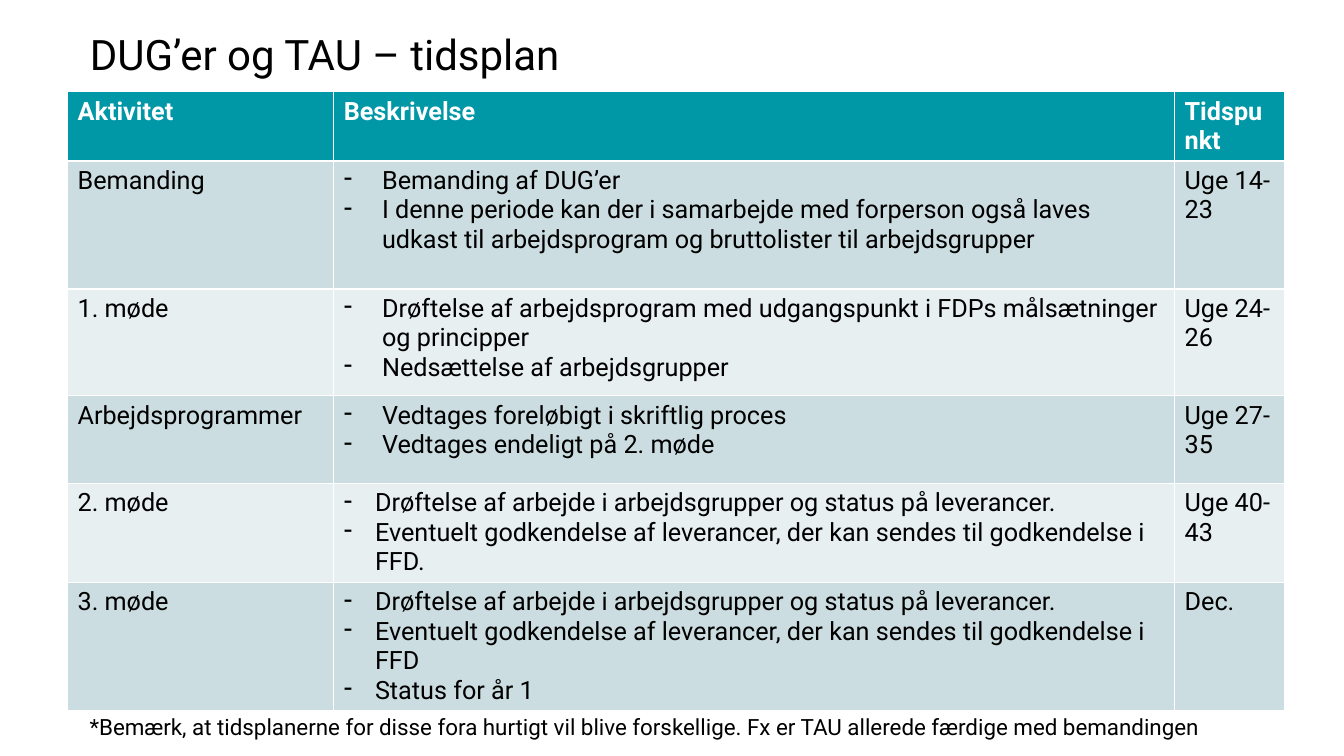
"""Build the timetable slide for DUG and TAU."""
from lxml import etree
from pptx import Presentation, util as u
from pptx.dml.color import RGBColor
from pptx.enum import text
from pptx.oxml import ns

TEAL = RGBColor(0x00, 0x97, 0xA7)
BAND_DARK = RGBColor(0xCC, 0xDD, 0xE1)
BAND_LIGHT = RGBColor(0xE7, 0xEF, 0xF1)
WHITE = RGBColor(0xFF, 0xFF, 0xFF)
BLACK = RGBColor(0x00, 0x00, 0x00)

COLUMN_WIDTHS = [2.64, 8.34, 1.09]
ROW_HEIGHTS = [0.68, 1.27, 1.06, 0.87, 0.96, 1.25]
HEADINGS = ["Aktivitet", "Beskrivelse", "Tidspunkt"]
STATUS = "Drøftelse af arbejde i arbejdsgrupper og status på leverancer."
APPROVAL = "Eventuelt godkendelse af leverancer, der kan sendes til godkendelse i FFD"
ACTIVITIES = [
    ("Bemanding", 0.38, [
        "Bemanding af DUG’er",
        "I denne periode kan der i samarbejde med forperson også laves "
        "udkast til arbejdsprogram og bruttolister til arbejdsgrupper"], "Uge 14-23"),
    ("1. møde", 0.38, [
        "Drøftelse af arbejdsprogram med udgangspunkt i FDPs målsætninger og principper",
        "Nedsættelse af arbejdsgrupper"], "Uge 24-26"),
    ("Arbejdsprogrammer", 0.38, [
        "Vedtages foreløbigt i skriftlig proces",
        "Vedtages endeligt på 2. møde"], "Uge 27-35"),
    ("2. møde", 0.31, [STATUS, APPROVAL + "."], "Uge 40-43"),
    ("3. møde", 0.31, [STATUS, APPROVAL, "Status for år 1"], "Dec."),
]


def set_font(para, size, colour=BLACK, bold=False):
    font = para.font
    font.name, font.size, font.bold = "Roboto", u.Pt(size), bold
    font.color.rgb = colour


def add_dash(para, indent):
    properties = para._p.get_or_add_pPr()
    properties.set("marL", str(u.Inches(indent)))
    properties.set("indent", str(-u.Inches(indent)))
    etree.SubElement(properties, ns.qn("a:buChar")).set("char", "-")


deck = Presentation()
deck.slide_width, deck.slide_height = u.Inches(13.33), u.Inches(7.5)
page = deck.slides.add_slide(deck.slide_layouts[5])

title = page.shapes.title
title.left, title.top = u.Inches(0.79), u.Inches(0.23)
title.width, title.height = u.Inches(12.17), u.Inches(0.61)
title.text_frame.text = "DUG’er og TAU – tidsplan"
title.text_frame.vertical_anchor = text.MSO_ANCHOR.MIDDLE
title.text_frame.paragraphs[0].alignment = text.PP_ALIGN.LEFT
set_font(title.text_frame.paragraphs[0], 30)

timetable = page.shapes.add_table(
    len(ROW_HEIGHTS), len(COLUMN_WIDTHS), u.Inches(0.67), u.Inches(0.91),
    u.Inches(sum(COLUMN_WIDTHS)), u.Inches(sum(ROW_HEIGHTS))).table
for column, width in zip(timetable.columns, COLUMN_WIDTHS):
    column.width = u.Inches(width)
for row, height in zip(timetable.rows, ROW_HEIGHTS):
    row.height = u.Inches(height)

for cell, heading in zip(timetable.rows[0].cells, HEADINGS):
    cell.fill.solid()
    cell.fill.fore_color.rgb = TEAL
    cell.text = heading
    set_font(cell.text_frame.paragraphs[0], 18, WHITE, True)

for number, (activity, indent, points, weeks) in enumerate(ACTIVITIES, 1):
    cells = timetable.rows[number].cells
    for cell, content in zip(cells, [activity, "\n".join(points), weeks]):
        cell.fill.solid()
        cell.fill.fore_color.rgb = BAND_DARK if number % 2 else BAND_LIGHT
        cell.text = content
    for para in cells[1].text_frame.paragraphs:
        add_dash(para, indent)
    for cell in cells:
        for para in cell.text_frame.paragraphs:
            set_font(para, 18)

note = page.shapes.add_textbox(
    u.Inches(0.79), u.Inches(7.03), u.Inches(11.76), u.Inches(0.37)).text_frame
note.word_wrap = True
note.text = ("*Bemærk, at tidsplanerne for disse fora hurtigt vil blive forskellige. "
             "Fx er TAU allerede færdige med bemandingen")
set_font(note.paragraphs[0], 16)

deck.save("out.pptx")
